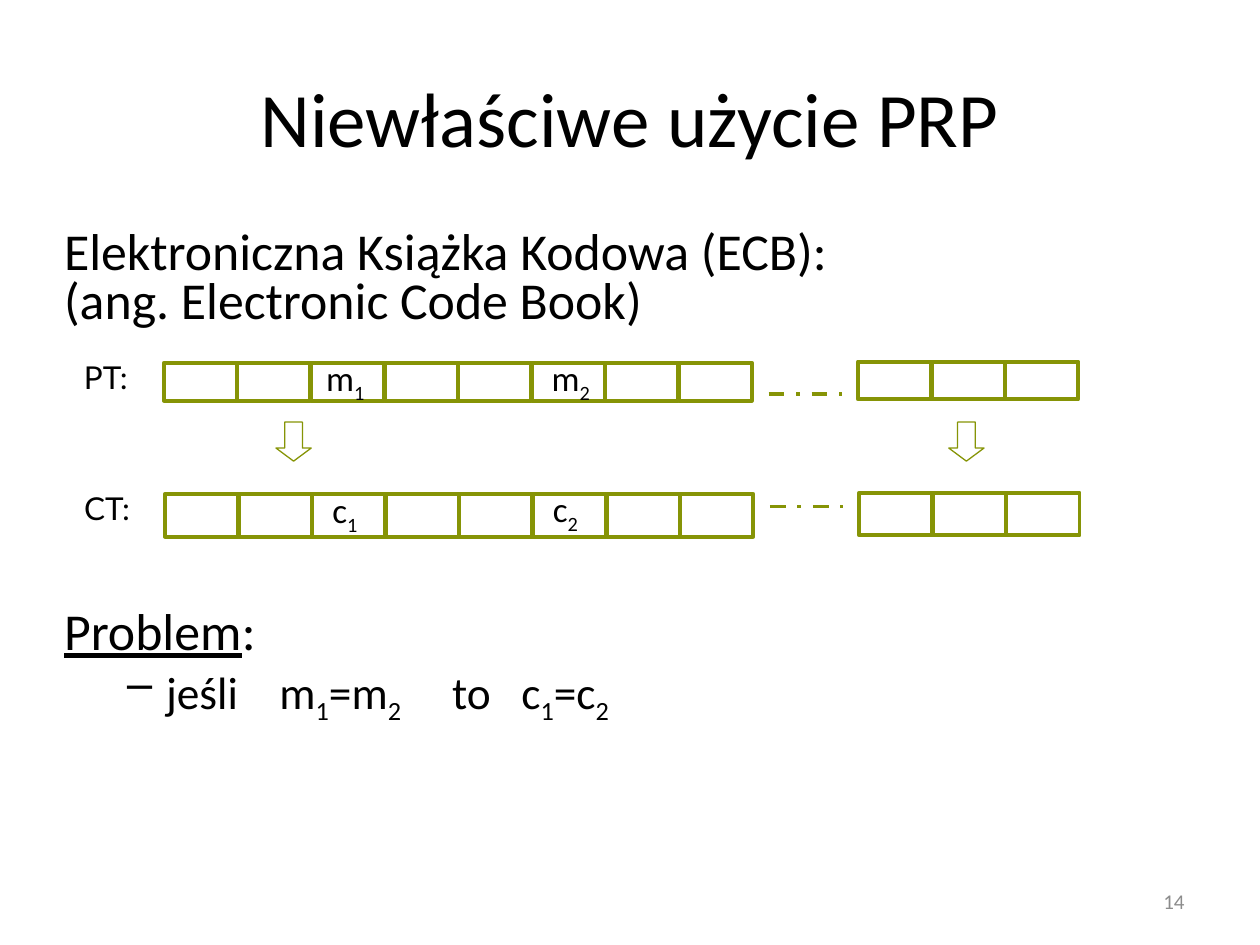
from dataclasses import dataclass

from lxml.etree import SubElement
from pptx import Presentation
from pptx.dml.color import RGBColor
from pptx.enum.dml import MSO_LINE
from pptx.enum.shapes import MSO_CONNECTOR, MSO_SHAPE
from pptx.enum.text import MSO_ANCHOR, PP_ALIGN
from pptx.oxml.ns import qn
from pptx.util import Inches, Pt

COLORS = {"text": "000000", "number": "8C8C8C", "block": "869406"}
WIDTH, HEIGHT = 10, 7.5
BLOCK_WIDTH = 0.58
BLOCK_PITCH = 0.584
MESSAGE_BLOCKS, TAIL_BLOCKS = 8, 3
TAIL_OFFSET = 5.51  # from the first block to the first tail block
DASH_OFFSET, DASH_WIDTH = 4.8, 0.58
NAME_OFFSET, NAME_WIDTH = 0.81, 0.7


@dataclass
class BlockLabel:
    text: str
    left: float
    top: float


@dataclass
class BlockRow:
    name: str
    left: float
    top: float
    height: float
    dash_y: float
    labels: tuple[BlockLabel, ...]


ROWS = (
    BlockRow("PT:", 1.3, 2.88, 0.3, 3.13,
             (BlockLabel("m_1", 2.49, 2.78), BlockLabel("m_2", 4.28, 2.78))),
    BlockRow("CT:", 1.31, 3.92, 0.34, 4.02,
             (BlockLabel("c_1", 2.54, 3.83), BlockLabel("c_2", 4.29, 3.82))),
)
ARROW_LEFTS = (2.19, 7.53)


def color(name: str) -> RGBColor:
    return RGBColor.from_string(COLORS[name])


def style_runs(paragraph, size: float, font: str = "Calibri", ink: str = "text") -> None:
    for run in paragraph.runs:
        run.font.size = Pt(size)
        run.font.name = font
        run.font.color.rgb = color(ink)


def add_text_frame(slide, left: float, top: float, width: float, height: float,
                   anchor=MSO_ANCHOR.TOP):
    box = slide.shapes.add_textbox(*map(Inches, (left, top, width, height)))
    frame = box.text_frame
    frame.word_wrap = True
    frame.vertical_anchor = anchor
    return frame


def add_line(slide, text: str, area: tuple, size: float, align=PP_ALIGN.LEFT,
             font: str = "Calibri", ink: str = "text", anchor=MSO_ANCHOR.TOP) -> None:
    paragraph = add_text_frame(slide, *area, anchor).paragraphs[0]
    write_subscripts(paragraph, text)
    paragraph.alignment = align
    style_runs(paragraph, size, font, ink)


def write_subscripts(paragraph, text: str) -> None:
    """Write text in which the character after each underscore is a subscript."""
    first, *others = text.split("_")
    paragraph.add_run().text = first
    for part in others:
        index = paragraph.add_run()
        index.text = part[0]
        index.font._element.set("baseline", "-25000")
        if part[1:]:
            paragraph.add_run().text = part[1:]


def space_body(paragraph, size: float) -> None:
    paragraph.line_spacing = 0.8
    paragraph.space_before = Pt(size * 0.2)
    style_runs(paragraph, size)


def make_dash_item(paragraph, left: float, hang: float, tabs: tuple) -> None:
    properties = paragraph._p.get_or_add_pPr()
    properties.set("marL", str(Inches(left)))
    properties.set("indent", str(-Inches(hang)))
    SubElement(properties, qn("a:buChar"), char="–")
    stops = SubElement(properties, qn("a:tabLst"))
    for position in tabs:
        SubElement(stops, qn("a:tab"), pos=str(Inches(position)), algn="l")


def add_outline(slide, kind, left: float, top: float, width: float, height: float,
                weight: float):
    shape = slide.shapes.add_shape(kind, *map(Inches, (left, top, width, height)))
    shape.shadow.inherit = False
    shape.fill.background()
    shape.line.color.rgb = color("block")
    shape.line.width = Pt(weight)
    return shape


def add_dash(slide, left: float, y: float) -> None:
    dash = slide.shapes.add_connector(
        MSO_CONNECTOR.STRAIGHT, *map(Inches, (left, y, left + DASH_WIDTH, y)))
    dash.line.color.rgb = color("block")
    dash.line.width = Pt(2.25)
    dash.line.dash_style = MSO_LINE.DASH_DOT
    SubElement(dash._element.spPr, qn("a:effectLst"))


def add_block_row(slide, row: BlockRow) -> None:
    groups = ((row.left, row.top, MESSAGE_BLOCKS),
              (row.left + TAIL_OFFSET, row.top - 0.01, TAIL_BLOCKS))
    for left, top, count in groups:
        for column in range(count):
            add_outline(slide, MSO_SHAPE.RECTANGLE, left + column * BLOCK_PITCH, top,
                        BLOCK_WIDTH, row.height, 2.25)
    add_dash(slide, row.left + DASH_OFFSET, row.dash_y)
    add_line(slide, row.name,
             (row.left - NAME_OFFSET, row.top - 0.09, NAME_WIDTH, 0.4), 18,
             PP_ALIGN.CENTER, "Lato")
    for label in row.labels:
        add_line(slide, label.text, (label.left, label.top, 0.54, 0.44), 20)


def add_body(slide) -> None:
    intro = add_text_frame(slide, 0.41, 1.78, 9.08, 0.95).paragraphs[0]
    intro.text = "Elektroniczna Książka Kodowa (ECB):\v(ang. Electronic Code Book)"
    space_body(intro, 29.6)

    problem_frame = add_text_frame(slide, 0.41, 4.8, 9.08, 1.23)
    problem = problem_frame.paragraphs[0]
    for text in ("Problem", ":"):
        problem.add_run().text = text
    problem.runs[0].font.underline = True
    space_body(problem, 29.6)

    condition = problem_frame.add_paragraph()
    write_subscripts(condition, "jeśli\tm_1=m_2\tto\tc_1=c_2")
    space_body(condition, 25.9)
    make_dash_item(condition, 0.81, 0.31, (1.71, 3.08, 3.63))


def main() -> None:
    presentation = Presentation()
    presentation.slide_width = Inches(WIDTH)
    presentation.slide_height = Inches(HEIGHT)
    slide = presentation.slides.add_slide(presentation.slide_layouts[6])

    add_line(slide, "Niewłaściwe użycie PRP", (0.5, 0.3, 9, 1.25), 44,
             PP_ALIGN.CENTER, anchor=MSO_ANCHOR.MIDDLE)
    add_line(slide, "14", (7.17, 6.95, 2.33, 0.4), 12, PP_ALIGN.RIGHT,
             ink="number", anchor=MSO_ANCHOR.MIDDLE)
    add_body(slide)
    for left in ARROW_LEFTS:
        arrow = add_outline(slide, MSO_SHAPE.DOWN_ARROW, left, 3.35, 0.28, 0.31, 0.75)
        arrow.adjustments[1] = 0.37
    for row in ROWS:
        add_block_row(slide, row)
    presentation.save("out.pptx")


if __name__ == "__main__":
    main()
